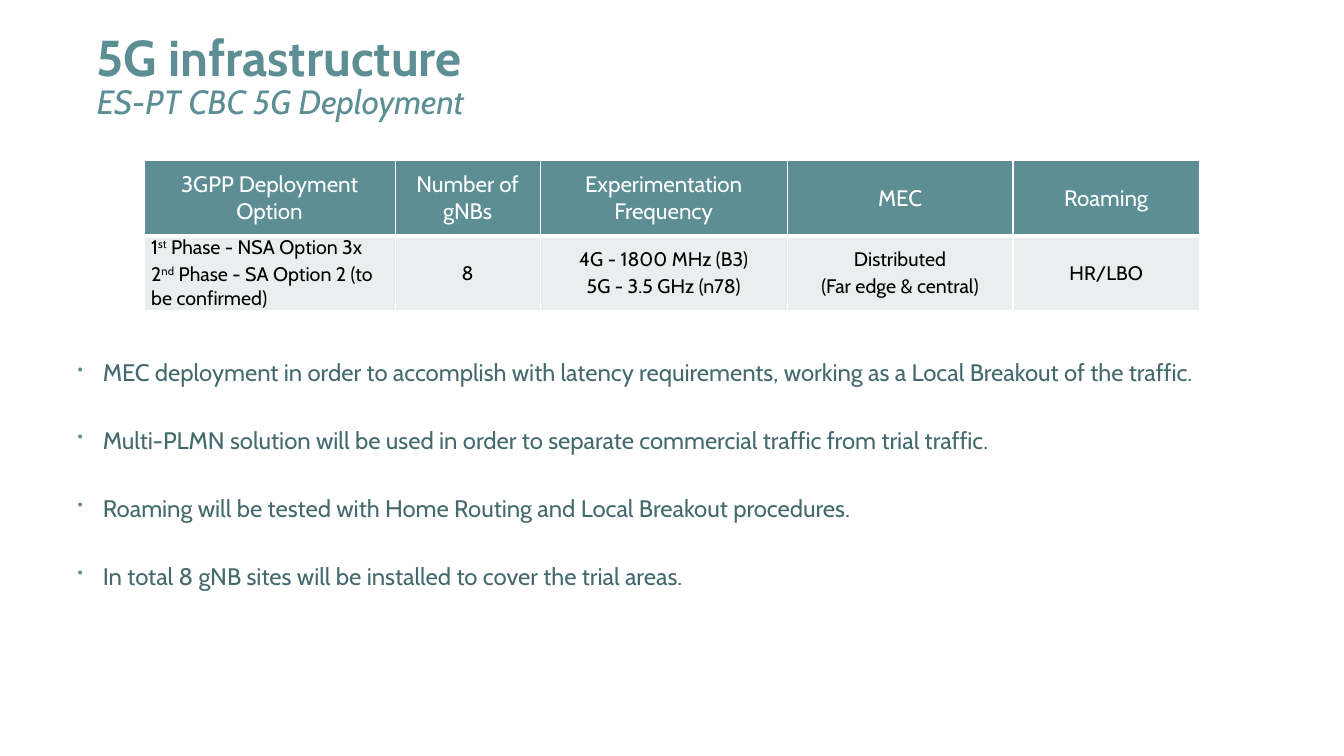
from copy import deepcopy
from dataclasses import dataclass

from lxml import etree
from pptx import Presentation
from pptx import util as u
from pptx.dml.color import RGBColor
from pptx.enum import text
from pptx.oxml import ns

COLOURS = {
    "teal": "5C8E93",
    "dark teal": "456A6E",
    "pale": "EAEEEE",
    "white": "FFFFFF",
    "black": "000000",
}
FONT = "Cabin"
WIDTH, HEIGHT = u.Inches(13.33), u.Inches(7.5)
COLUMNS, ROWS = 160, 90


@dataclass(frozen=True)
class Area:
    column: float
    row: float
    columns: float
    rows: float

    def place(self) -> tuple[int, int, int, int]:
        return across(self.column), down(self.row), across(self.columns), down(self.rows)


@dataclass(frozen=True)
class Style:
    size: float
    colour: str
    bold: bool = False
    italic: bool = False


@dataclass(frozen=True)
class Span:
    words: str
    raised: bool = False


@dataclass(frozen=True)
class Cell:
    lines: tuple[tuple[Span, ...], ...]
    centred: bool = True


@dataclass(frozen=True)
class Band:
    rows: float
    fill: str
    style: Style
    rule: float
    cells: tuple[Cell, ...]


def across(columns: float) -> int:
    return round(WIDTH * columns / COLUMNS)


def down(rows: float) -> int:
    return round(HEIGHT * rows / ROWS)


def plain(*lines: str) -> Cell:
    return Cell(tuple((Span(line),) for line in lines))


TITLE_AREA = Area(11.52, 4.2, 124.32, 9.6)
TITLE = (
    ("5G infrastructure", Style(36, "teal", bold=True)),
    ("ES-PT CBC 5G Deployment", Style(24, "teal", italic=True)),
)
TABLE_AREA = Area(17.16, 19.08, 125.64, 17.8)
TABLE_COLUMNS = (29.88, 17.28, 29.4, 26.88, 22.2)
BANDS = (
    Band(9, "teal", Style(16, "white"), 3, (
        plain("3GPP Deployment Option"),
        plain("Number of gNBs"),
        plain("Experimentation Frequency"),
        plain("MEC"),
        plain("Roaming"),
    )),
    Band(8.8, "pale", Style(14, "black"), 1, (
        Cell((
            (Span("1"), Span("st", True), Span(" Phase - NSA Option 3x")),
            (Span("2"), Span("nd", True), Span(" Phase - SA Option 2 (to be confirmed)")),
        ), centred=False),
        plain("8"),
        plain("4G - 1800 MHz (B3)", "5G - 3.5 GHz (n78)"),
        plain("Distributed", "(Far edge & central)"),
        plain("HR/LBO"),
    )),
)
POINTS_AREA = Area(9.24, 43.56, 141.36, 29.52)
POINTS_STYLE = Style(17.1, "dark teal")
POINTS = (
    "MEC deployment in order to accomplish with latency requirements, "
    "working as a Local Breakout of the traffic.",
    "Multi-PLMN solution will be used in order to separate commercial traffic from trial traffic.",
    "Roaming will be tested with Home Routing and Local Breakout procedures.",
    "In total 8 gNB sites will be installed to cover the trial areas.",
)


def colour(name: str) -> RGBColor:
    return RGBColor.from_string(COLOURS[name])


def add_span(para, words: str, style: Style):
    span = para.add_run()
    span.text = words
    font = span.font
    font.name, font.size = FONT, u.Pt(style.size)
    font.bold, font.italic = style.bold, style.italic
    font.color.rgb = colour(style.colour)
    return span


def clear_frame(frame) -> None:
    frame.word_wrap = True
    frame.auto_size = text.MSO_AUTO_SIZE.NONE
    frame.vertical_anchor = text.MSO_ANCHOR.TOP
    frame.margin_left = frame.margin_right = frame.margin_top = frame.margin_bottom = 0


def next_para(frame, index: int):
    return frame.add_paragraph() if index else frame.paragraphs[0]


def draw_title(page) -> None:
    box = page.shapes.title
    box.left, box.top, box.width, box.height = TITLE_AREA.place()
    clear_frame(box.text_frame)
    para = box.text_frame.paragraphs[0]
    para.alignment = text.PP_ALIGN.LEFT
    para.line_spacing = 0.85
    (heading, heading_style), (subtitle, subtitle_style) = TITLE
    span = add_span(para, heading, heading_style)
    para.add_line_break()
    para._p[-1].append(deepcopy(span._r.rPr))
    add_span(para, subtitle, subtitle_style)


def add_borders(cell, bottom: float) -> None:
    properties = cell._tc.get_or_add_tcPr()
    for side, points in (("L", 1), ("R", 1), ("T", 1), ("B", bottom)):
        line = etree.SubElement(properties, ns.qn(f"a:ln{side}"), w=str(u.Pt(points)))
        fill = etree.SubElement(line, ns.qn("a:solidFill"))
        etree.SubElement(fill, ns.qn("a:srgbClr"), val=COLOURS["white"])


def draw_cell(cell, content: Cell, band: Band) -> None:
    add_borders(cell, band.rule)
    cell.fill.solid()
    cell.fill.fore_color.rgb = colour(band.fill)
    cell.vertical_anchor = text.MSO_ANCHOR.MIDDLE
    cell.margin_left = cell.margin_right = u.Inches(0.07)
    cell.margin_top = cell.margin_bottom = 0
    for index, line in enumerate(content.lines):
        para = next_para(cell.text_frame, index)
        para.alignment = text.PP_ALIGN.CENTER if content.centred else text.PP_ALIGN.LEFT
        para.space_after = u.Pt(2)
        for part in line:
            span = add_span(para, part.words, band.style)
            if part.raised:
                span._r.get_or_add_rPr().set("baseline", "30000")


def draw_table(page) -> None:
    frame = page.shapes.add_table(len(BANDS), len(TABLE_COLUMNS), *TABLE_AREA.place())
    table = frame.table
    for column, columns in zip(table.columns, TABLE_COLUMNS):
        column.width = across(columns)
    for row, band in zip(table.rows, BANDS):
        row.height = down(band.rows)
        for cell, content in zip(row.cells, band.cells):
            draw_cell(cell, content, band)


def add_bullet(para) -> None:
    properties = para._p.get_or_add_pPr()
    properties.set("marL", str(u.Inches(0.25)))
    properties.set("indent", str(-u.Inches(0.25)))
    tint = etree.SubElement(properties, ns.qn("a:buClr"))
    etree.SubElement(tint, ns.qn("a:srgbClr"), val=COLOURS["teal"])
    etree.SubElement(properties, ns.qn("a:buSzPct"), val="65000")
    etree.SubElement(properties, ns.qn("a:buChar"), char="•")


def draw_points(page) -> None:
    box = page.shapes.add_textbox(*POINTS_AREA.place())
    clear_frame(box.text_frame)
    for index, point in enumerate(POINTS):
        para = next_para(box.text_frame, index)
        add_bullet(para)
        para.alignment = text.PP_ALIGN.JUSTIFY
        para.line_spacing = 0.7
        para.space_before = u.Pt(34 if index else 0)
        add_span(para, point, POINTS_STYLE)


def main() -> None:
    deck = Presentation()
    deck.slide_width, deck.slide_height = WIDTH, HEIGHT
    page = deck.slides.add_slide(deck.slide_layouts.get_by_name("Title Only"))
    draw_table(page)
    draw_points(page)
    draw_title(page)
    deck.save("out.pptx")


if __name__ == "__main__":
    main()
